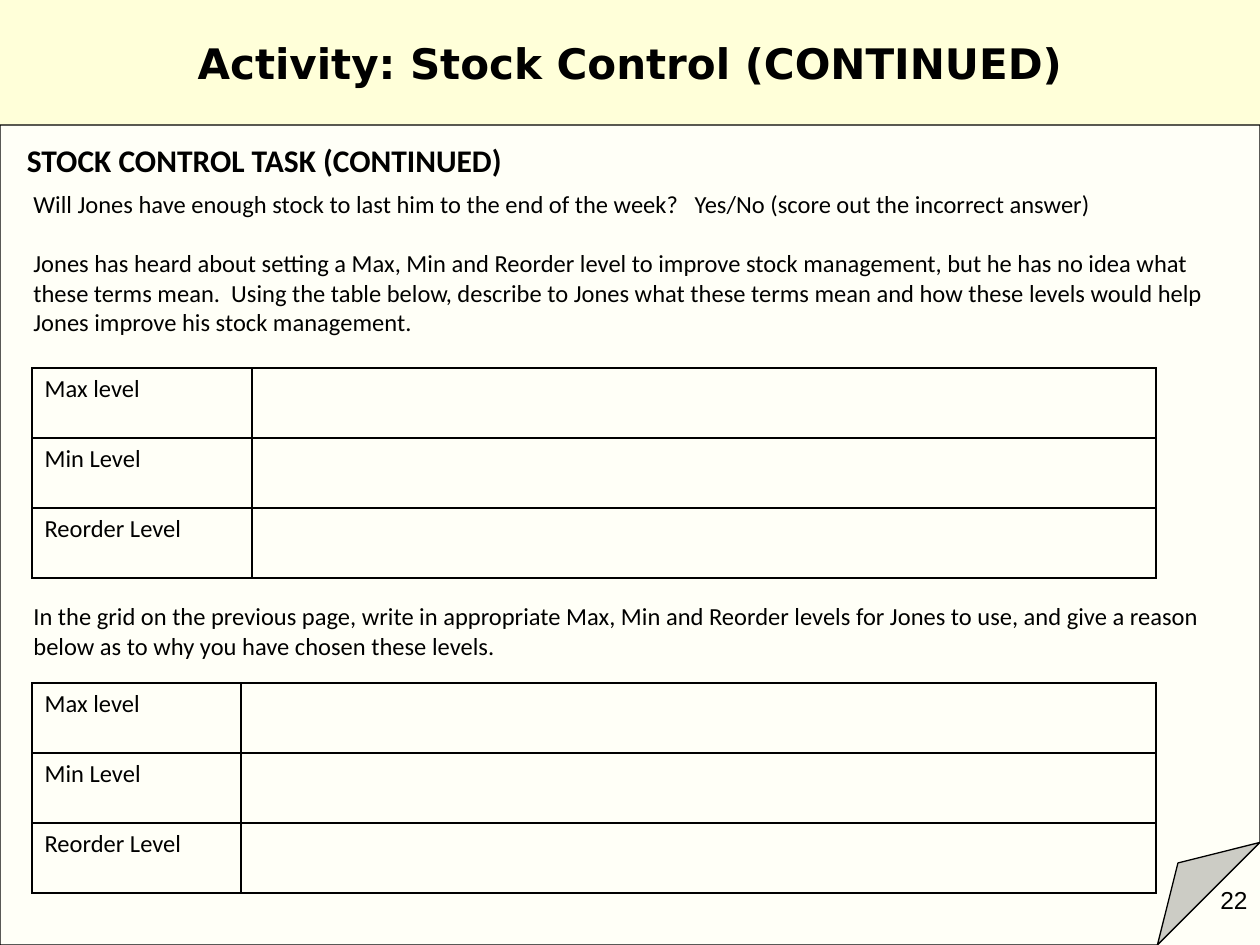
import dataclasses
import typing

import lxml.etree
import pptx
import pptx.dml.color
import pptx.enum.shapes
import pptx.enum.text
import pptx.oxml.ns
import pptx.util

Align = pptx.enum.text.PP_ALIGN
Anchor = pptx.enum.text.MSO_ANCHOR
Shape = pptx.enum.shapes.MSO_SHAPE
qn = pptx.oxml.ns.qn
PX_PER_INCH = 126


@dataclasses.dataclass(frozen=True)
class Theme:
    paper: str = "FFFFF7"
    banner: str = "FFFFD9"
    ink: str = "000000"
    title_font: str = "DejaVu Sans"
    body_font: str = "Calibri"
    number_font: str = "Arial"
    title_size: int = 24
    heading_size: int = 18
    body_size: int = 14
    paragraph_gap: int = 17
    outline: float = 0.75
    grid_line: float = 1


THEME = Theme()


class Area(typing.NamedTuple):
    left: int
    top: int
    width: int
    height: int


class AnswerGrid(typing.NamedTuple):
    top: int
    label_width: int


class Passage(typing.NamedTuple):
    area: Area
    paragraphs: list[str]


LEVELS = ["Max level", "Min Level", "Reorder Level"]
GRID_LEFT, GRID_WIDTH, ROW_HEIGHT = 32, 1124, 70
GRIDS = [AnswerGrid(368, 220), AnswerGrid(683, 209)]

PASSAGES = [
    Passage(Area(21, 183, 1218, 160), [
        "Will Jones have enough stock to last him to the end of the week?   "
        "Yes/No (score out the incorrect answer)",
        "Jones has heard about setting a Max, Min and Reorder level to improve stock "
        "management, but he has no idea what these terms mean.  Using the table below, "
        "describe to Jones what these terms mean and how these levels would help "
        "Jones improve his stock management.",
    ]),
    Passage(Area(21, 595, 1218, 72), [
        "In the grid on the previous page, write in appropriate Max, Min and Reorder "
        "levels for Jones to use, and give a reason below as to why you have chosen "
        "these levels.",
    ]),
]


def px(length: int) -> pptx.util.Emu:
    return pptx.util.Emu(round(length * 914400 / PX_PER_INCH))


def emu(area: Area) -> list[pptx.util.Emu]:
    return [px(length) for length in area]


def color(value: str) -> pptx.dml.color.RGBColor:
    return pptx.dml.color.RGBColor.from_string(value)


def write(frame, *paragraphs: str, size: int = THEME.body_size,
          font: str = THEME.body_font, bold: bool = False,
          align=Align.LEFT, anchor=Anchor.TOP) -> None:
    frame.word_wrap = True
    frame.vertical_anchor = anchor
    for index, text in enumerate(paragraphs):
        para = frame.add_paragraph() if index else frame.paragraphs[0]
        para.alignment = align
        if index:
            para.space_before = pptx.util.Pt(THEME.paragraph_gap)
        span = para.add_run()
        span.text = text
        span.font.name = font
        span.font.size = pptx.util.Pt(size)
        span.font.bold = bold
        span.font.color.rgb = color(THEME.ink)


def add_panel(page, kind, area: Area, fill: str, outlined: bool = False):
    panel = page.shapes.add_shape(kind, *emu(area))
    panel.shadow.inherit = False
    panel.fill.solid()
    panel.fill.fore_color.rgb = color(fill)
    if outlined:
        panel.line.color.rgb = color(THEME.ink)
        panel.line.width = pptx.util.Pt(THEME.outline)
    else:
        panel.line.fill.background()
    return panel


def set_fold(sheet, fraction: float) -> None:
    """Size the folded corner, which python-pptx lists without adjustments."""
    geometry = sheet._element.spPr.find(qn("a:prstGeom"))
    guides = geometry.find(qn("a:avLst"))
    if guides is None:
        guides = lxml.etree.SubElement(geometry, qn("a:avLst"))
    lxml.etree.SubElement(guides, qn("a:gd"), name="adj",
                          fmla=f"val {round(fraction * 100000)}")


def add_text(page, area: Area, *paragraphs: str, **text_format) -> None:
    box = page.shapes.add_textbox(*emu(area))
    write(box.text_frame, *paragraphs, **text_format)


def rule_cell(cell) -> None:
    """Clear the cell's fill and draw a line on all four sides."""
    properties = cell._tc.get_or_add_tcPr()
    for side in ("a:lnL", "a:lnR", "a:lnT", "a:lnB"):
        line = lxml.etree.SubElement(properties, qn(side),
                                     w=str(int(pptx.util.Pt(THEME.grid_line))))
        solid = lxml.etree.SubElement(line, qn("a:solidFill"))
        lxml.etree.SubElement(solid, qn("a:srgbClr"), val=THEME.ink)
    cell.fill.background()


def add_grid(page, grid: AnswerGrid) -> None:
    area = Area(GRID_LEFT, grid.top, GRID_WIDTH, ROW_HEIGHT * len(LEVELS))
    table = page.shapes.add_table(len(LEVELS), 2, *emu(area)).table
    table.first_row = table.horz_banding = False
    table.columns[0].width = px(grid.label_width)
    table.columns[1].width = px(GRID_WIDTH - grid.label_width)
    for row, level in enumerate(LEVELS):
        table.rows[row].height = px(ROW_HEIGHT)
        write(table.cell(row, 0).text_frame, level)
    for cell in table.iter_cells():
        rule_cell(cell)


def main() -> None:
    deck = pptx.Presentation()
    deck.slide_width, deck.slide_height = px(1260), px(945)
    page = deck.slides.add_slide(deck.slide_layouts[6])
    page.background.fill.solid()
    page.background.fill.fore_color.rgb = color(THEME.paper)

    banner = add_panel(page, Shape.RECTANGLE, Area(0, 0, 1260, 125), THEME.banner)
    write(banner.text_frame, "Activity: Stock Control (CONTINUED)",
          size=THEME.title_size, font=THEME.title_font, bold=True,
          align=Align.CENTER, anchor=Anchor.MIDDLE)

    sheet = add_panel(page, Shape.FOLDED_CORNER, Area(0, 125, 1260, 820),
                      THEME.paper, outlined=True)
    set_fold(sheet, 0.125)
    frame = sheet.text_frame
    frame.margin_left = frame.margin_right = px(27)
    frame.margin_top = frame.margin_bottom = px(16)
    write(frame, "STOCK CONTROL TASK (CONTINUED)", size=THEME.heading_size, bold=True)

    for passage in PASSAGES:
        add_text(page, passage.area, *passage.paragraphs)
    for grid in GRIDS:
        add_grid(page, grid)
    add_text(page, Area(966, 879, 294, 66), "22",
             font=THEME.number_font, align=Align.RIGHT)
    deck.save("out.pptx")


if __name__ == "__main__":
    main()
